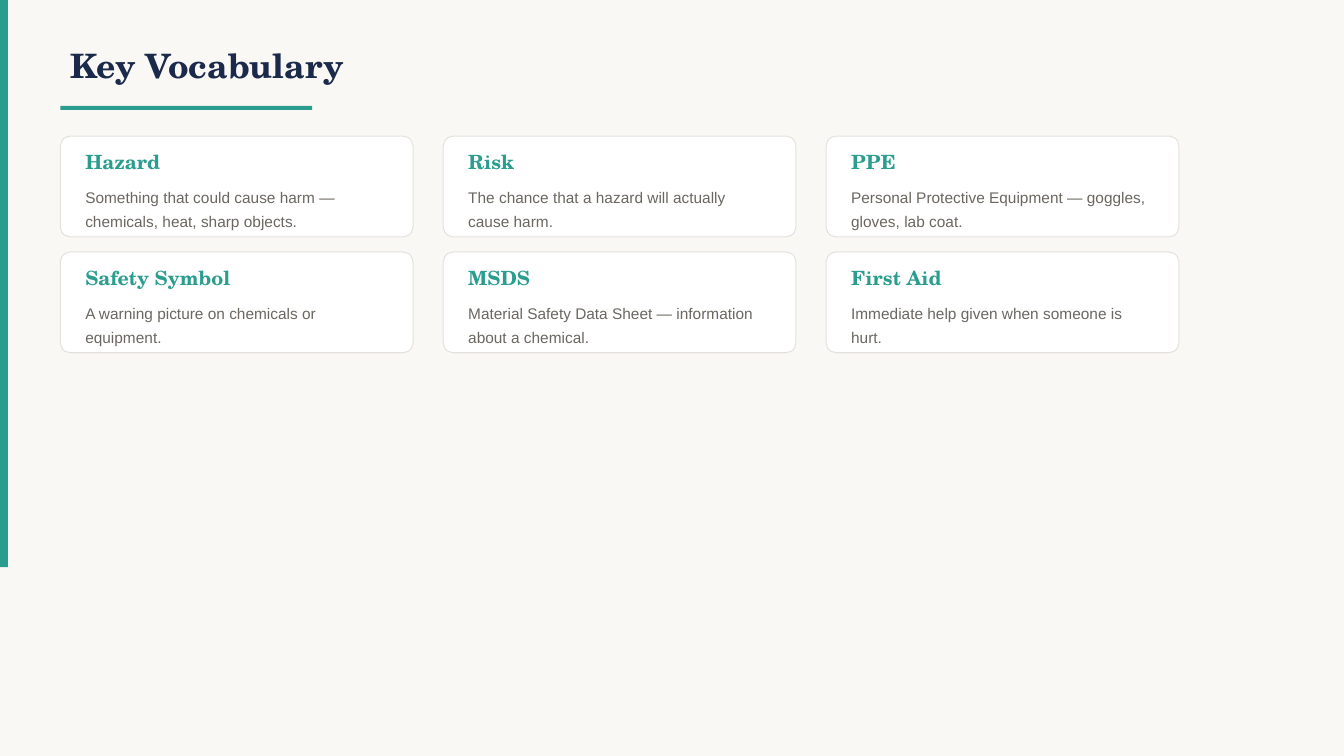
import pptx
import pptx.dml.color
import pptx.enum.shapes
import pptx.enum.text
import pptx.util

TITLE = "Key Vocabulary"
TERMS = [
    ("Hazard", "Something that could cause harm — chemicals, heat, sharp objects."),
    ("Risk", "The chance that a hazard will actually cause harm."),
    ("PPE", "Personal Protective Equipment — goggles, gloves, lab coat."),
    ("Safety Symbol", "A warning picture on chemicals or equipment."),
    ("MSDS", "Material Safety Data Sheet — information about a chemical."),
    ("First Aid", "Immediate help given when someone is hurt."),
]

TEAL = "2A9D8F"
HEADING = "TeX Gyre Schola"
TITLE_FONT = {"name": HEADING, "size": pptx.util.Pt(24), "bold": True, "color": "1B2A4A"}
TERM_FONT = {"name": HEADING, "size": pptx.util.Pt(14), "bold": True, "color": TEAL}
MEANING_FONT = {"name": "Arial", "size": pptx.util.Pt(11), "color": "6B6660"}

COLUMNS = 3
LEFT, TOP = 1.52, 3.43
CARD_W, CARD_H = 8.89, 2.54
STEP_X, STEP_Y = 9.65, 2.92
INSET = 0.38
TEXT_W = CARD_W - 2 * INSET

Cm = pptx.util.Cm
SHAPE = pptx.enum.shapes.MSO_SHAPE


def paint(target, color):
    if hasattr(target, "solid"):
        target.solid()
        target = target.fore_color
    target.rgb = pptx.dml.color.RGBColor.from_string(color)


def add_box(s, kind, x, y, w, h, fill, line=None):
    sp = s.shapes.add_shape(kind, Cm(x), Cm(y), Cm(w), Cm(h))
    sp.shadow.inherit = False
    paint(sp.fill, fill)
    if line:
        paint(sp.line.fill, line)
        sp.line.width = pptx.util.Pt(0.75)
    else:
        sp.line.fill.background()
    return sp


def add_text(s, text, x, y, w, h, font, spacing=None):
    tf = s.shapes.add_textbox(Cm(x), Cm(y), Cm(w), Cm(h)).text_frame
    tf.word_wrap = True
    tf.vertical_anchor = pptx.enum.text.MSO_ANCHOR.MIDDLE
    p = tf.paragraphs[0]
    p.line_spacing = spacing
    r = p.add_run()
    r.text = text
    for key, value in font.items():
        if key == "color":
            paint(r.font.color, value)
        else:
            setattr(r.font, key, value)


def add_card(s, x, y, term, meaning):
    card = add_box(s, SHAPE.ROUNDED_RECTANGLE, x, y, CARD_W, CARD_H, "FFFFFF", "E5E2DC")
    card.adjustments[0] = 0.1
    add_text(s, term, x + INSET, y + 0.2, TEXT_W, 0.89, TERM_FONT)
    add_text(s, meaning, x + INSET, y + 1.14, TEXT_W, 1.27, MEANING_FONT, 1.3)


def main():
    prs = pptx.Presentation()
    prs.slide_width, prs.slide_height = Cm(33.87), Cm(19.05)
    s = prs.slides.add_slide(prs.slide_layouts[6])
    paint(s.background.fill, "FAF8F5")
    add_box(s, SHAPE.RECTANGLE, 0, 0, 0.2, 14.29, TEAL)
    add_text(s, TITLE, LEFT, 0.76, 25.4, 1.78, TITLE_FONT)
    add_box(s, SHAPE.RECTANGLE, LEFT, 2.67, 6.35, 0.1, TEAL)
    for i, (term, meaning) in enumerate(TERMS):
        row, col = divmod(i, COLUMNS)
        add_card(s, LEFT + col * STEP_X, TOP + row * STEP_Y, term, meaning)
    prs.save("out.pptx")


if __name__ == "__main__":
    main()
